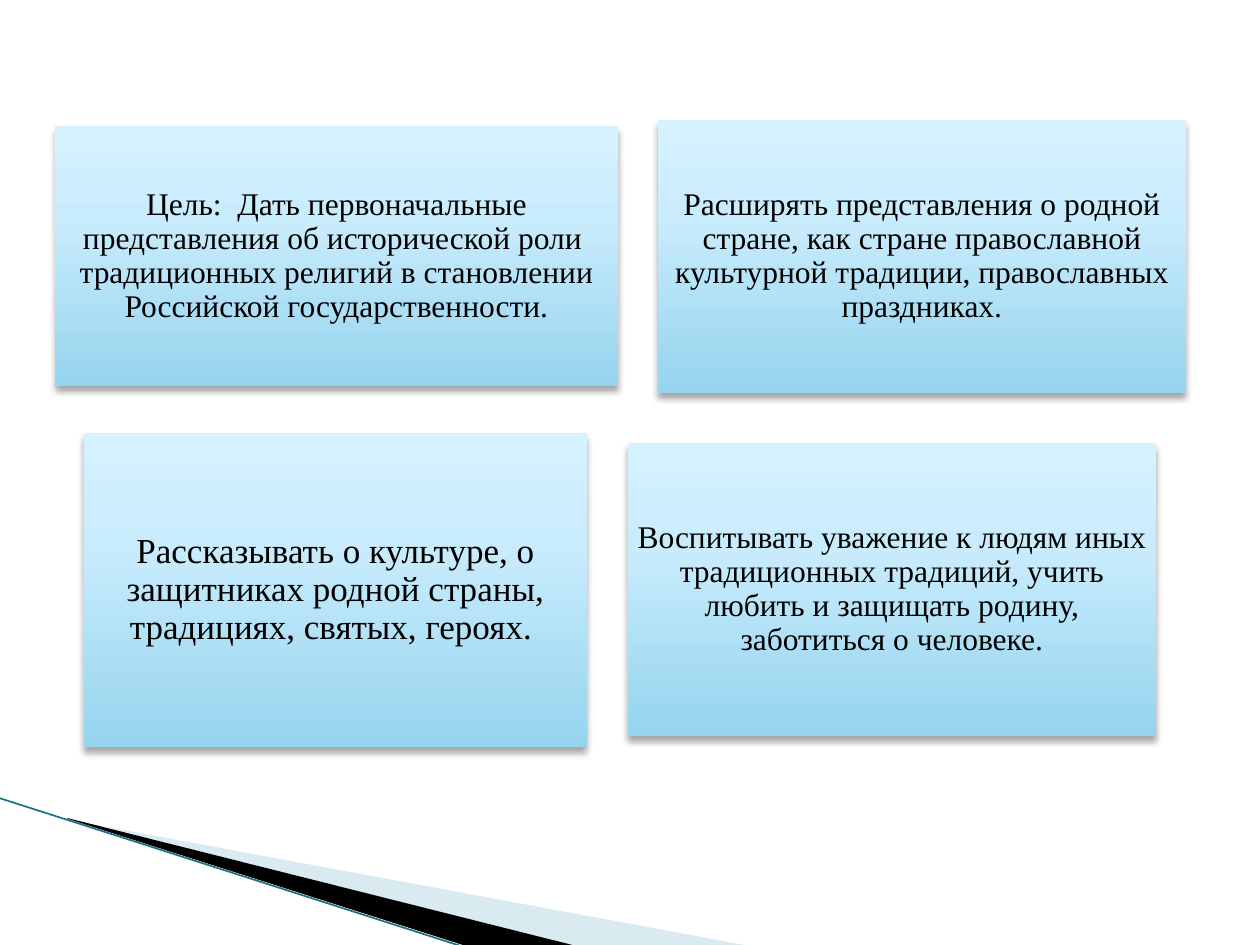
import pptx
import pptx.dml.color
import pptx.enum.shapes
import pptx.enum.text
import pptx.oxml
import pptx.oxml.ns
import pptx.util

# Goals: text, type size, (left, top, width, height) in px, inset in px
GOALS = [
    ("Цель:  Дать первоначальные представления об исторической роли  "
     "традиционных религий в становлении Российской государственности.",
     18, (55, 126, 563, 260), 9),
    ("Расширять представления о родной стране, как стране православной "
     "культурной традиции, православных праздниках.",
     18, (658, 120, 528, 273), 9),
    ("Рассказывать о культуре, о защитниках родной страны, традициях, "
     "святых, героях. ",
     20, (84, 433, 503, 314), 10),
    ("Воспитывать уважение к людям иных традиционных традиций, учить "
     "любить и защищать родину, заботиться о человеке.",
     18, (628, 443, 528, 293), 9),
]

# Corner decoration in px
PALE_WEDGE = [(69, 820), (750, 946), (575, 946), (69, 819)]
DARK_WEDGE = [(67, 818), (576, 946), (469, 947), (68, 819)]
EDGE = [(-1, 798), (467, 948)]

THEME = {
    "font": "Times New Roman",
    "text": "000000",
    "pale": "A0CBDC",
    "dark": "000000",
    "edge": "1B6F86",
    "card": [(0, "96D4EE"), (65, "C9ECFC"), (100, "D7F2FF")],
    "shadow": "000000",
}
PX = 914400 // 126
NS = pptx.oxml.ns.nsdecls("a")


def px(n):
    return pptx.util.Emu(n * PX)


def rgb(name):
    return pptx.dml.color.RGBColor.from_string(THEME[name])


def add_wedge(slide, points, colour, opacity=100):
    builder = slide.shapes.build_freeform(*points[0], scale=PX)
    builder.add_line_segments(points[1:], close=True)
    wedge = builder.convert_to_shape()
    wedge.shadow.inherit = False
    wedge.fill.solid()
    wedge.fill.fore_color.rgb = rgb(colour)
    wedge.line.fill.background()
    if opacity < 100:
        fill_colour = wedge.fill._xPr.find(".//" + pptx.oxml.ns.qn("a:srgbClr"))
        fill_colour.append(pptx.oxml.parse_xml(
            f'<a:alpha {NS} val="{opacity * 1000}"/>'))


def add_card(slide, goal, size, box, inset):
    card = slide.shapes.add_shape(
        pptx.enum.shapes.MSO_SHAPE.RECTANGLE, *map(px, box))
    card.line.fill.background()
    card.shadow.inherit = False

    # Gradient from bottom to top, and a soft shadow below
    stops = "".join(
        f'<a:gs pos="{pos * 1000}"><a:srgbClr val="{colour}"/></a:gs>'
        for pos, colour in THEME["card"])
    properties = card._element.spPr
    properties.insert(2, pptx.oxml.parse_xml(
        f'<a:gradFill {NS} rotWithShape="1"><a:gsLst>{stops}</a:gsLst>'
        '<a:lin ang="16200000" scaled="0"/></a:gradFill>'))
    properties.find(pptx.oxml.ns.qn("a:effectLst")).append(pptx.oxml.parse_xml(
        f'<a:outerShdw {NS} blurRad="{pptx.util.Pt(4)}" dist="{pptx.util.Pt(3)}" '
        f'dir="5400000" rotWithShape="0"><a:srgbClr val="{THEME["shadow"]}">'
        '<a:alpha val="35000"/></a:srgbClr></a:outerShdw>'))

    frame = card.text_frame
    frame.word_wrap = True
    frame.vertical_anchor = pptx.enum.text.MSO_ANCHOR.MIDDLE
    frame.margin_left = frame.margin_right = px(inset)
    frame.margin_top = frame.margin_bottom = px(inset)
    paragraph = frame.paragraphs[0]
    paragraph.alignment = pptx.enum.text.PP_ALIGN.CENTER
    paragraph.line_spacing = 0.9
    run = paragraph.add_run()
    run.text = goal
    run.font.name = THEME["font"]
    run.font.size = pptx.util.Pt(size)
    run.font.color.rgb = rgb("text")


def main():
    deck = pptx.Presentation()
    deck.slide_width, deck.slide_height = px(1260), px(945)
    slide = deck.slides.add_slide(deck.slide_layouts[6])

    # Corner decoration
    add_wedge(slide, PALE_WEDGE, "pale", opacity=40)
    add_wedge(slide, DARK_WEDGE, "dark")
    (x1, y1), (x2, y2) = EDGE
    edge = slide.shapes.add_connector(
        pptx.enum.shapes.MSO_CONNECTOR.STRAIGHT, px(x1), px(y1), px(x2), px(y2))
    edge.line.color.rgb = rgb("edge")
    edge.line.width = pptx.util.Pt(0.95)
    edge._element.spPr.append(pptx.oxml.parse_xml(f"<a:effectLst {NS}/>"))

    # Goal cards
    for goal in GOALS:
        add_card(slide, *goal)

    deck.save("out.pptx")


if __name__ == "__main__":
    main()
